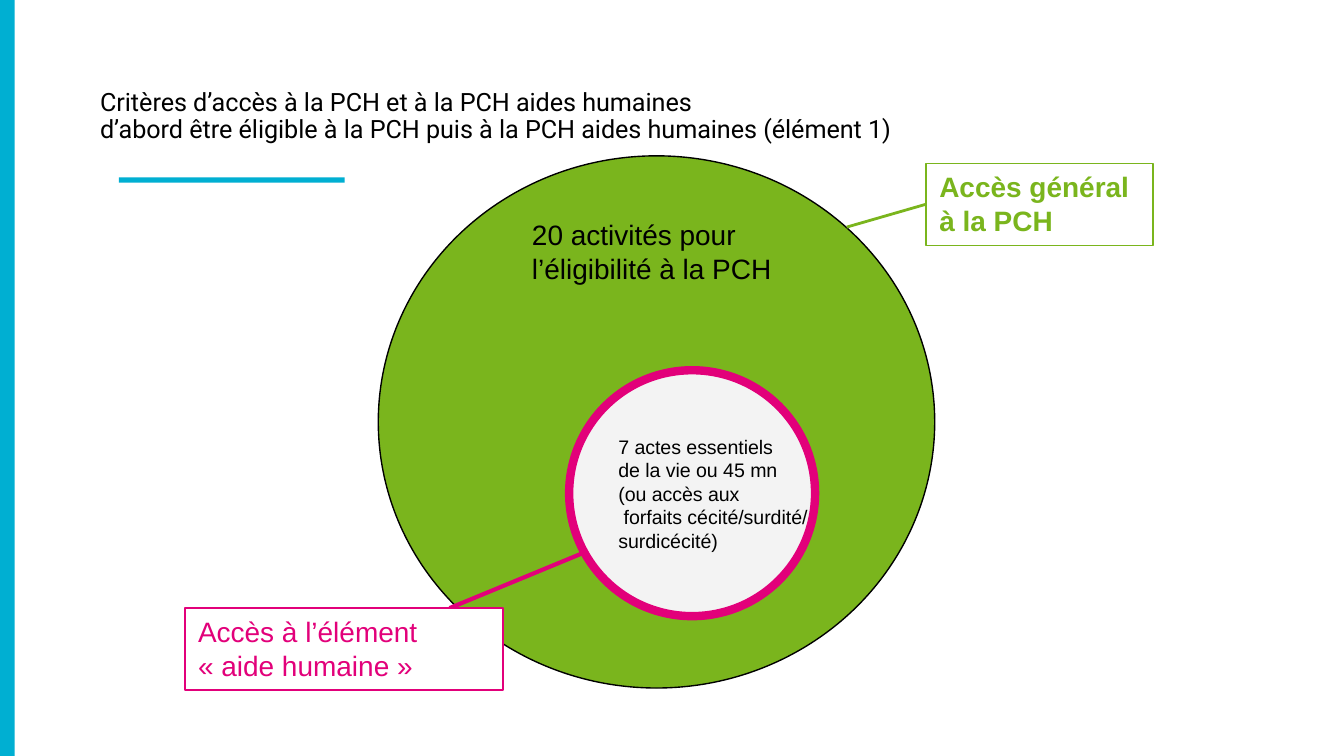
from lxml import etree
from pptx import Presentation, util as u
from pptx.dml.color import RGBColor
from pptx.enum import shapes, text
from pptx.oxml.ns import qn

PX = 4572
BLUE, GREEN, PINK = "00AFD2", "7AB51D", "E2007A"
BLACK, WHITE, GREY = "000000", "FFFFFF", "F3F3F3"
RECT, OVAL = shapes.MSO_SHAPE.RECTANGLE, shapes.MSO_SHAPE.OVAL
HARD = chr(160)


def emu(*nums):
    """Turn px lengths into EMU."""
    return [u.Emu(n * PX) for n in nums]


def color(code):
    """Return the colour of a hex string."""
    return RGBColor.from_string(code)


def shape(slide, kind, box, fill=None, line=None, width=1):
    """Add a flat preset shape."""
    item = slide.shapes.add_shape(kind, *emu(*box))
    item.shadow.inherit = False
    if fill:
        item.fill.solid()
        item.fill.fore_color.rgb = color(fill)
    else:
        item.fill.background()
    if line:
        item.line.color.rgb = color(line)
        item.line.width = u.Pt(width)
    else:
        item.line.fill.background()
    return item


def write(item, words, size, ink=BLACK, font="Arial", bold=False,
          wrap=True, anchor=text.MSO_ANCHOR.TOP):
    """Fill a shape with left-aligned text."""
    frame = item.text_frame
    frame.text = words
    frame.word_wrap = wrap
    frame.vertical_anchor = anchor
    for para in frame.paragraphs:
        para.alignment = text.PP_ALIGN.LEFT
        for run in para.runs:
            run.font.size = u.Pt(size)
            run.font.name = font
            run.font.bold = bold
            run.font.color.rgb = color(ink)
    return frame


def link(slide, start, end, ink, width):
    """Add a flat straight connector."""
    item = slide.shapes.add_connector(
        shapes.MSO_CONNECTOR.STRAIGHT, *emu(*start, *end))
    item.line.color.rgb = color(ink)
    item.line.width = u.Pt(width)
    etree.SubElement(item._element.spPr, qn("a:effectLst"))
    return item


def header(slide, x, y, w, h):
    """Place the title with its side band and rule."""
    shape(slide, RECT, (0, 0, 22, 1125), BLUE)
    shape(slide, RECT, (x + 48, y + h + 30, 336, 8), BLUE)
    title = slide.shapes.title
    title.left, title.top, title.width, title.height = emu(x, y, w, h)
    frame = write(title, "Critères d’accès à la PCH et à la PCH aides humaines\v"
                  "d’abord être éligible à la PCH puis à la PCH aides humaines"
                  " (élément 1)", 13.5, font="Roboto",
                  anchor=text.MSO_ANCHOR.BOTTOM)
    frame.auto_size = text.MSO_AUTO_SIZE.NONE
    frame.margin_left, frame.margin_right = emu(20, 20)
    frame.margin_top, frame.margin_bottom = emu(20, 20)
    frame.paragraphs[0].line_spacing = 0.9


def rings(slide, x, y, w, h):
    """Draw the access circle with the smaller one inside."""
    shape(slide, OVAL, (x, y, w, h), GREEN, BLACK, 0.75)
    note = slide.shapes.add_textbox(*emu(x + 209, y + 82, 428, 122))
    write(note, "20 activités pour\nl’éligibilité à la PCH", 15)
    core = shape(slide, OVAL, (x + 284, y + 319, 366, 366), GREY, PINK, 4.5)
    write(core, "7 actes essentiels\nde la vie ou 45 mn\n(ou accès aux\n"
          " forfaits cécité/surdité/\nsurdicécité)", 10.5, wrap=False,
          anchor=text.MSO_ANCHOR.MIDDLE)


def aid(slide, x, y, w, h):
    """Place the human aid label and its line."""
    link(slide, (x + 394, y), (x + 595, y - 83), PINK, 2.25)
    label = shape(slide, RECT, (x, y, w, h), WHITE, PINK, 1.25)
    write(label, f"Accès à l’élément «{HARD}aide humaine{HARD}»", 15, PINK)


def access(slide, x, y, w, h):
    """Place the general access label and its line."""
    label = shape(slide, RECT, (x, y, w, h), None, GREEN, 0.75)
    write(label, "Accès général\nà la PCH", 15, GREEN, bold=True, wrap=False)
    line = link(slide, (x - 118, y + 95), (x, y + h // 2), GREEN, 1.5)
    line.end_connect(label, 1)


def main():
    """Build and save the slide."""
    deck = Presentation()
    deck.slide_width, deck.slide_height = emu(2000, 1125)
    slide = deck.slides.add_slide(deck.slide_layouts[5])
    header(slide, 129, 104, 1800, 130)
    rings(slide, 563, 232, 828, 792)
    aid(slide, 275, 905, 474, 122)
    access(slide, 1378, 243, 338, 122)
    deck.save("out.pptx")


if __name__ == "__main__":
    main()
